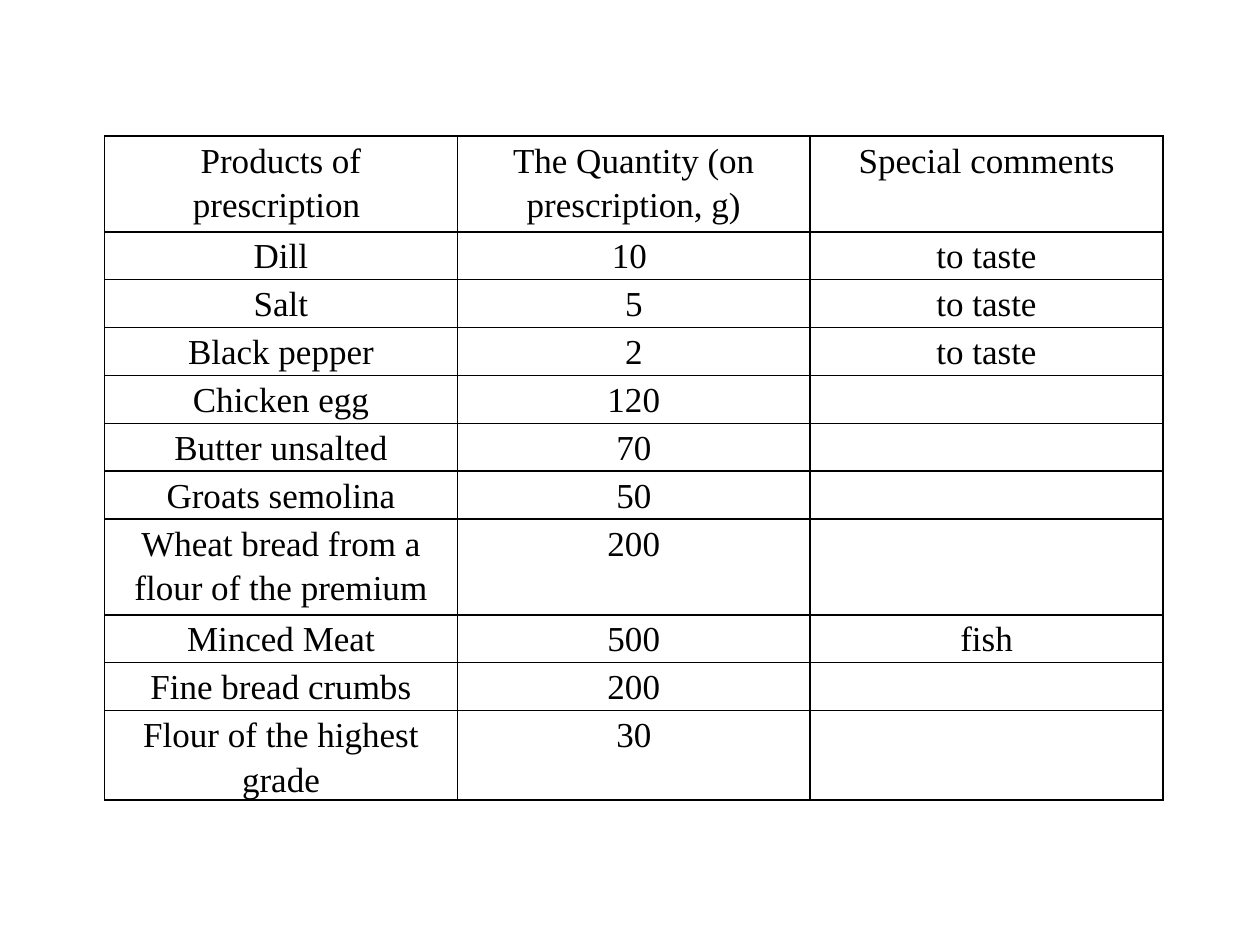
from lxml.etree import SubElement
from pptx import Presentation
from pptx.dml.color import RGBColor
from pptx.enum.text import PP_ALIGN
from pptx.oxml.ns import qn
from pptx.util import Inches, Pt

BLACK = "000000"
COLUMN_WIDTH = 2.8
LINE_HEIGHT = 0.38
LAST_ROW_HEIGHT = 0.71

INGREDIENTS = [
    ("Products of prescription ", "The Quantity (on prescription, g)", "Special comments"),
    ("Dill", "10 ", "to taste"),
    ("Salt", "5", "to taste"),
    ("Black pepper", "2", "to taste"),
    ("Chicken egg", "120", ""),
    ("Butter unsalted", "70", ""),
    ("Groats semolina", "50", ""),
    ("Wheat bread from a flour of the premium", "200", ""),
    ("Minced Meat", "500", "fish"),
    ("Fine bread crumbs", "200", ""),
    ("Flour of the highest grade", "30", ""),
]
TWO_LINE_ROWS = (0, 7)


def color(hex_string):
    return RGBColor.from_string(hex_string)


def add_borders(cell, hex_string, width):
    properties = cell._tc.get_or_add_tcPr()
    for side in ("lnL", "lnR", "lnT", "lnB"):
        line = SubElement(properties, qn(f"a:{side}"), w=str(Pt(width)))
        fill = SubElement(line, qn("a:solidFill"))
        SubElement(fill, qn("a:srgbClr"), val=hex_string)


presentation = Presentation()
presentation.slide_width = Inches(10)
presentation.slide_height = Inches(7.5)
slide = presentation.slides.add_slide(presentation.slide_layouts[6])

heights = [LINE_HEIGHT * (2 if row in TWO_LINE_ROWS else 1) for row in range(len(INGREDIENTS))]
heights[-1] = LAST_ROW_HEIGHT
column_count = len(INGREDIENTS[0])

table = slide.shapes.add_table(
    len(INGREDIENTS), column_count, Inches(0.83), Inches(1.08),
    Inches(COLUMN_WIDTH * column_count), Inches(sum(heights)),
).table
table.first_row = False
table.horz_banding = False
for column in table.columns:
    column.width = Inches(COLUMN_WIDTH)

for row, height, texts in zip(table.rows, heights, INGREDIENTS):
    row.height = Inches(height)
    for cell, text in zip(row.cells, texts):
        cell.margin_left = cell.margin_right = Inches(0.07)
        cell.margin_top = cell.margin_bottom = 0
        add_borders(cell, BLACK, 1)
        cell.fill.background()
        cell.text_frame.text = text
        paragraph = cell.text_frame.paragraphs[0]
        paragraph.alignment = PP_ALIGN.CENTER
        paragraph.line_spacing = 1.15
        for run in paragraph.runs:
            run.font.name = "Times New Roman"
            run.font.size = Pt(20)
            run.font.color.rgb = color(BLACK)

presentation.save("out.pptx")
